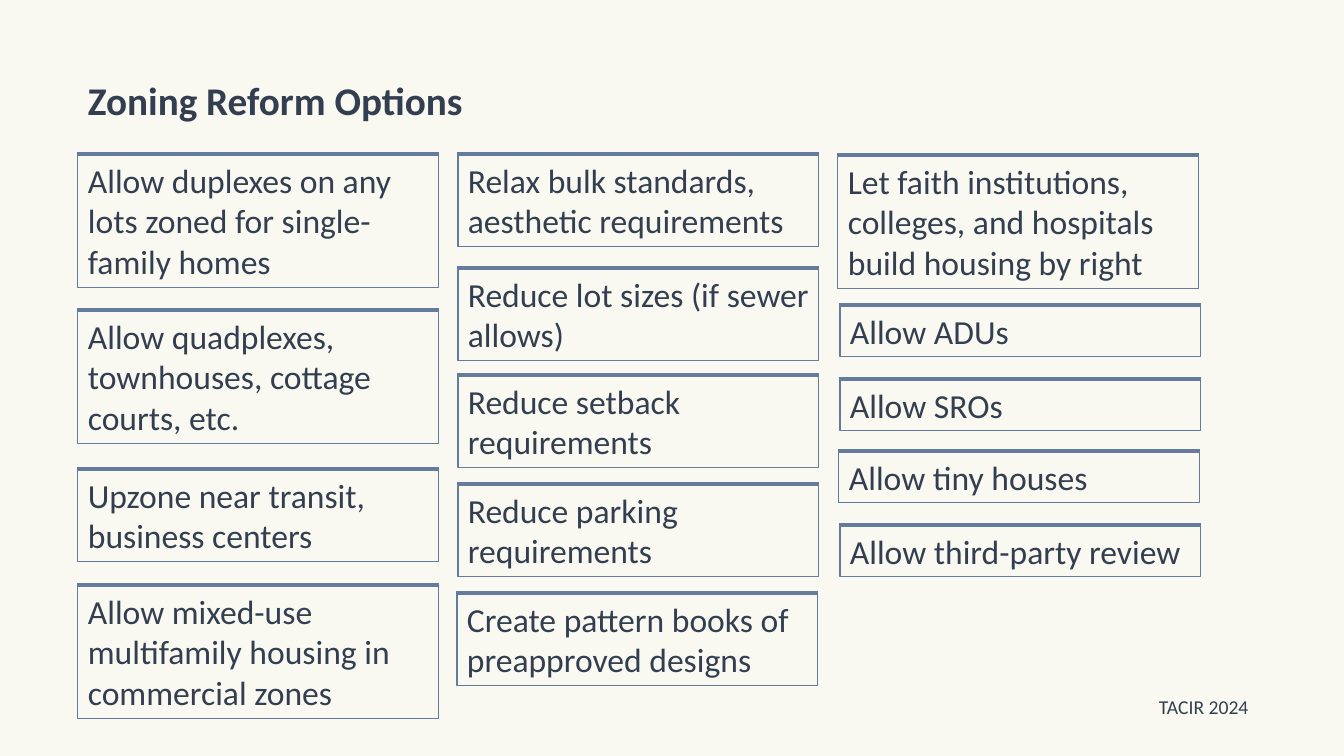
from lxml import etree
from pptx import Presentation
from pptx.dml.color import RGBColor
from pptx.enum.shapes import MSO_CONNECTOR, MSO_SHAPE
from pptx.enum.text import MSO_ANCHOR, MSO_AUTO_SIZE, PP_ALIGN
from pptx.oxml.ns import qn
from pptx.util import Emu, Pt

RECTANGLE = MSO_SHAPE.RECTANGLE
STRAIGHT = MSO_CONNECTOR.STRAIGHT
TOP = MSO_ANCHOR.TOP
GROW = MSO_AUTO_SIZE.SHAPE_TO_FIT_TEXT
LEFT = PP_ALIGN.LEFT

SLIDE_WIDTH, SLIDE_HEIGHT = 1344, 756
EMU_PER_PX = 12192000 / SLIDE_WIDTH

CARD_WIDTH = 361
CARD_PADDING = 10
LINE_HEIGHT = 41

# Each option: left, top, number of text lines, wording
OPTIONS = [
    # Housing types and places
    (78, 155, 3, "Allow duplexes on any lots zoned for single-family homes"),
    (78, 311, 3, "Allow quadplexes, townhouses, cottage courts, etc."),
    (78, 470, 2, "Upzone near transit, business centers"),
    (78, 586, 3, "Allow mixed-use multifamily housing in commercial zones"),
    # Standards and requirements
    (458, 155, 2, "Relax bulk standards, aesthetic requirements"),
    (458, 269, 2, "Reduce lot sizes (if sewer allows)"),
    (458, 376, 2, "Reduce setback requirements"),
    (458, 485, 2, "Reduce parking requirements"),
    (457, 594, 2, "Create pattern books of preapproved designs"),
    # Permissions
    (838, 156, 3, "Let faith institutions, colleges, and hospitals build housing by right"),
    (840, 306, 1, "Allow ADUs"),
    (840, 380, 1, "Allow SROs"),
    (839, 452, 1, "Allow tiny houses"),
    (840, 526, 1, "Allow third-party review"),
]


def px(length):
    return Emu(round(length * EMU_PER_PX))


def color(hex_value):
    return RGBColor.from_string(hex_value)


class ZoningSlide:
    font = "Calibri"
    ink = "333F50"
    accent = "647B9C"
    paper = "F9F9F1"

    def __init__(self, deck):
        self.slide = deck.slides.add_slide(deck.slide_layouts[6])
        fill = self.slide.background.fill
        fill.solid()
        fill.fore_color.rgb = color(self.paper)

    def set_text(self, frame, wording, size, bold=False, wrap=True):
        frame.word_wrap = wrap
        frame.auto_size = GROW
        frame.vertical_anchor = TOP
        paragraph = frame.paragraphs[0]
        paragraph.alignment = LEFT
        run = paragraph.add_run()
        run.text = wording
        run.font.name = self.font
        run.font.size = Pt(size)
        run.font.bold = bold
        run.font.color.rgb = color(self.ink)

    def label(self, left, top, width, height, wording, size, **style):
        box = self.slide.shapes.add_textbox(px(left), px(top), px(width), px(height))
        self.set_text(box.text_frame, wording, size, **style)

    def rule(self, left, right, y):
        line = self.slide.shapes.add_connector(STRAIGHT, px(left), px(y), px(right), px(y))
        line.line.color.rgb = color(self.accent)
        line.line.width = Pt(3.25)
        etree.SubElement(line._element.spPr, qn("a:effectLst"))

    def card(self, left, top, lines, wording):
        height = CARD_PADDING + LINE_HEIGHT * lines
        card = self.slide.shapes.add_shape(
            RECTANGLE, px(left), px(top), px(CARD_WIDTH), px(height))
        card.shadow.inherit = False
        card.fill.background()
        card.line.color.rgb = color(self.accent)
        card.line.width = Pt(0.75)
        self.set_text(card.text_frame, wording, 24)
        self.rule(left - 1, left + CARD_WIDTH, top - 1)


def main():
    deck = Presentation()
    deck.slide_width = px(SLIDE_WIDTH)
    deck.slide_height = px(SLIDE_HEIGHT)
    zoning = ZoningSlide(deck)

    # Title and source
    zoning.label(78, 71, 1094, 57, "Zoning Reform Options", 28, bold=True)
    zoning.label(1149, 690, 119, 34, "TACIR 2024", 14, wrap=False)

    # Reform options
    for option in OPTIONS:
        zoning.card(*option)

    deck.save("out.pptx")


if __name__ == "__main__":
    main()
